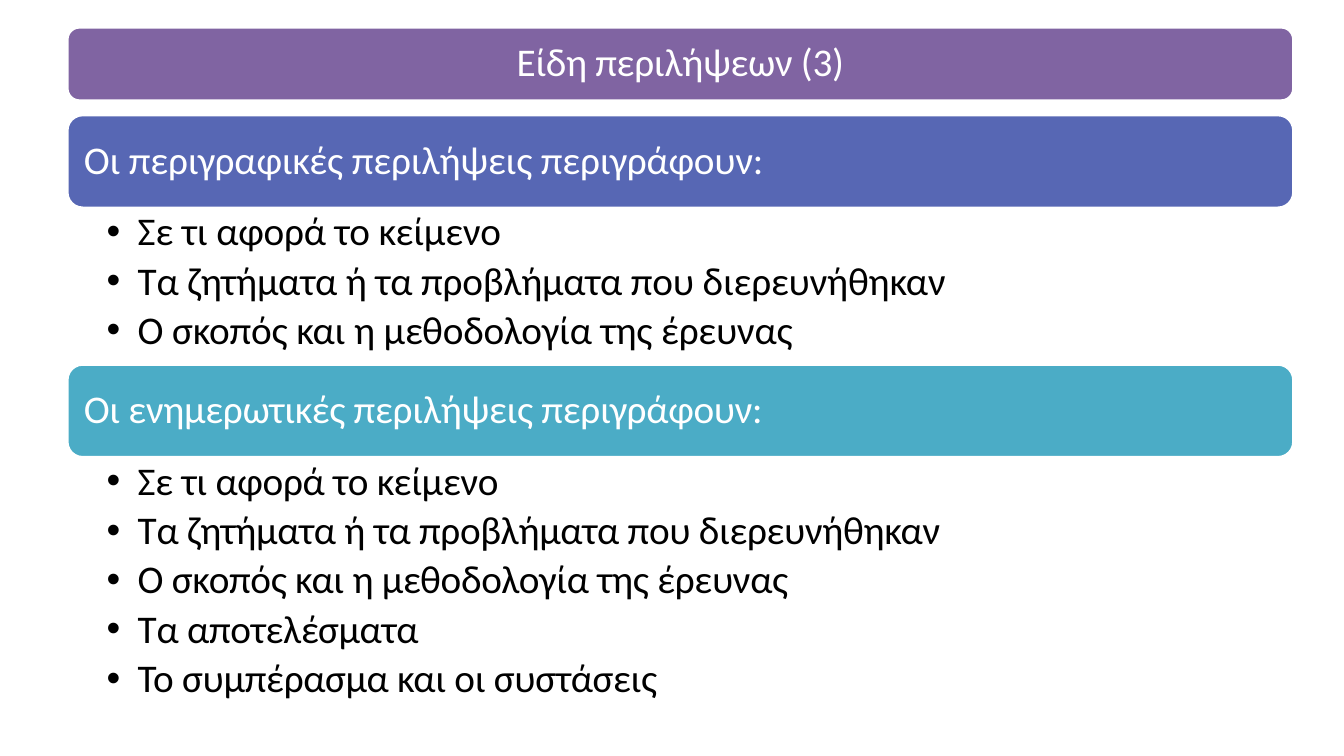
from dataclasses import dataclass

from lxml.etree import SubElement
from pptx import Presentation
from pptx.dml.color import RGBColor
from pptx.enum.shapes import MSO_SHAPE
from pptx.enum.text import MSO_ANCHOR, PP_ALIGN
from pptx.oxml.ns import qn
from pptx.slide import Slide
from pptx.text.text import TextFrame, _Paragraph
from pptx.util import Emu, Inches, Pt

PAGE_WIDTH, PAGE_HEIGHT = Inches(13.33), Inches(7.5)


@dataclass(frozen=True)
class Theme:
    font: str = "Calibri"
    size: int = 28
    line_spacing: float = 0.9
    bullet_gap: int = 5
    light: str = "FFFFFF"
    dark: str = "000000"
    purple: str = "8064A2"
    indigo: str = "5767B4"
    teal: str = "4BACC6"


@dataclass(frozen=True)
class Section:
    heading: str
    color: str
    tracking: int  # hundredths of a point
    bullets: tuple[str, ...]
    list_tracking: int
    list_height: float  # percent of the page height


THEME = Theme()

# Shares of the page, in percent
LEFT, WIDTH = 5, 91.25
TITLE_TOP, TITLE_HEIGHT = 3.6, 9.73
SECTIONS_TOP, HEADING_HEIGHT = 15.2, 12.3

COMMON_BULLETS = (
    "Σε τι αφορά το κείμενο",
    "Τα ζητήματα ή τα προβλήματα που διερευνήθηκαν",
    "Ο σκοπός και η μεθοδολογία της έρευνας",
)
SECTIONS = (
    Section("Οι περιγραφικές περιλήψεις περιγράφουν:", THEME.indigo, -10,
            COMMON_BULLETS, -10, 20.7),
    Section("Οι ενημερωτικές περιλήψεις περιγράφουν:", THEME.teal, -20,
            COMMON_BULLETS + ("Τα αποτελέσματα", "Το συμπέρασμα και οι συστάσεις"),
            -20, 34.7),
)


def frame(top: float, height: float) -> tuple[Emu, Emu, Emu, Emu]:
    """Turn page shares into left, top, width and height."""
    return (Emu(int(PAGE_WIDTH * LEFT / 100)), Emu(int(PAGE_HEIGHT * top / 100)),
            Emu(int(PAGE_WIDTH * WIDTH / 100)), Emu(int(PAGE_HEIGHT * height / 100)))


def set_margins(text_frame: TextFrame, left: float, right: float, vertical: float) -> None:
    text_frame.word_wrap = True
    text_frame.margin_left, text_frame.margin_right = Inches(left), Inches(right)
    text_frame.margin_top = text_frame.margin_bottom = Inches(vertical)


def format_paragraph(para: _Paragraph, color: str, tracking: int) -> None:
    para.line_spacing = THEME.line_spacing
    for span in para.runs:
        span.font.name = THEME.font
        span.font.size = Pt(THEME.size)
        span.font.color.rgb = RGBColor.from_string(color)
        span._r.get_or_add_rPr().set("spc", str(tracking))


def add_bullet(para: _Paragraph) -> None:
    properties = para._p.get_or_add_pPr()
    indent = Inches(0.31)
    properties.set("marL", str(indent))
    properties.set("indent", str(-indent))
    SubElement(properties, qn("a:buFont")).set("typeface", "Arial")
    SubElement(properties, qn("a:buChar")).set("char", "•")


def draw_bar(page: Slide, top: float, height: float, text: str, color: str,
             tracking: int, alignment: PP_ALIGN) -> None:
    bar = page.shapes.add_shape(MSO_SHAPE.ROUNDED_RECTANGLE, *frame(top, height))
    bar.shadow.inherit = False
    bar.fill.solid()
    bar.fill.fore_color.rgb = RGBColor.from_string(color)
    bar.line.color.rgb = RGBColor.from_string(THEME.light)
    bar.line.width = Pt(2)
    set_margins(bar.text_frame, 0.12, 0.12, 0.12)
    bar.text_frame.vertical_anchor = MSO_ANCHOR.MIDDLE
    bar.text_frame.text = text
    para = bar.text_frame.paragraphs[0]
    para.alignment = alignment
    format_paragraph(para, THEME.light, tracking)


def draw_list(page: Slide, top: float, section: Section) -> None:
    box = page.shapes.add_textbox(*frame(top, section.list_height))
    set_margins(box.text_frame, 0.39, 0.22, 0.04)
    box.text_frame.text = "\n".join(section.bullets)
    for para in box.text_frame.paragraphs:
        para.level = 1
        format_paragraph(para, THEME.dark, section.list_tracking)
        para.space_after = Pt(THEME.bullet_gap)
        add_bullet(para)


def main() -> None:
    deck = Presentation()
    deck.slide_width, deck.slide_height = PAGE_WIDTH, PAGE_HEIGHT
    page = deck.slides.add_slide(deck.slide_layouts[6])
    draw_bar(page, TITLE_TOP, TITLE_HEIGHT, "Είδη περιλήψεων (3)",
             THEME.purple, -20, PP_ALIGN.CENTER)
    top = SECTIONS_TOP
    for section in SECTIONS:
        draw_bar(page, top, HEADING_HEIGHT, section.heading,
                 section.color, section.tracking, PP_ALIGN.LEFT)
        draw_list(page, top + HEADING_HEIGHT, section)
        top += HEADING_HEIGHT + section.list_height
    deck.save("out.pptx")


if __name__ == "__main__":
    main()
